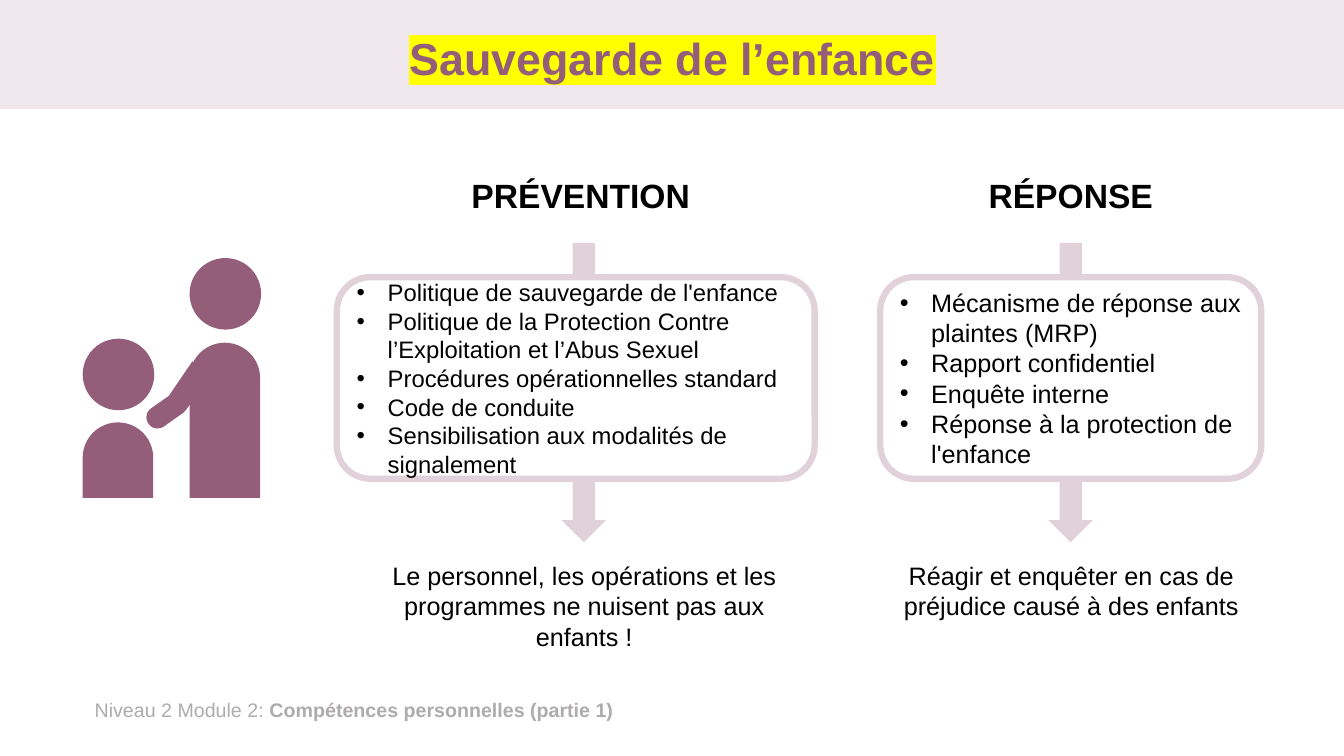
from lxml.etree import SubElement
from pptx import Presentation
from pptx.dml.color import RGBColor
from pptx.enum.shapes import MSO_SHAPE as SHAPE
from pptx.enum.text import MSO_ANCHOR as ANCHOR, MSO_AUTO_SIZE as AUTO, PP_ALIGN as ALIGN
from pptx.oxml.ns import qn
from pptx.util import Pt

PX = 9144
FONT = "Arial"
PLUM = RGBColor(0x94, 0x5E, 0x7A)
PINK = RGBColor(0xE1, 0xD1, 0xD9)
PALE = RGBColor(0xF0, 0xE7, 0xEC)
GREY = RGBColor(0xAE, 0xAB, 0xAB)
BLACK = RGBColor(0, 0, 0)
WHITE = RGBColor(255, 255, 255)

PREVENTION = [
    "Politique de sauvegarde de l'enfance",
    "Politique de la Protection Contre l’Exploitation et l’Abus Sexuel",
    "Procédures opérationnelles standard",
    "Code de conduite",
    "Sensibilisation aux modalités de signalement",
]
RESPONSE = [
    "Mécanisme de réponse aux plaintes (MRP)",
    "Rapport confidentiel",
    "Enquête interne",
    "Réponse à la protection de l'enfance",
]


def px(*lengths):
    return [n * PX for n in lengths]


def add_run(p, text, size, color=BLACK, bold=False):
    r = p.add_run()
    r.text = text
    r.font.size = Pt(size)
    r.font.name = FONT
    r.font.bold = bold
    r.font.color.rgb = color
    return r


def add_shape(s, kind, box, fill, adj=(), rotation=0):
    sp = s.shapes.add_shape(kind, *px(*box))
    sp.shadow.inherit = False
    sp.fill.solid()
    sp.fill.fore_color.rgb = fill
    sp.line.fill.background()
    sp.rotation = rotation
    for i, value in enumerate(adj):
        sp.adjustments[i] = value
    return sp


def add_text(s, box, runs, size, color=BLACK, align=ALIGN.CENTER):
    tf = s.shapes.add_textbox(*px(*box)).text_frame
    tf.word_wrap = True
    p = tf.paragraphs[0]
    p.alignment = align
    for text, bold in runs:
        add_run(p, text, size, color, bold)


def set_title(s, text):
    sp = s.shapes.title
    sp.left, sp.top, sp.width, sp.height = px(92, 13, 1150, 95)
    tf = sp.text_frame
    tf.auto_size = AUTO.NONE
    tf.vertical_anchor = ANCHOR.MIDDLE
    p = tf.paragraphs[0]
    p.alignment = ALIGN.CENTER
    p.line_spacing = 0.9
    r = add_run(p, text, 32, PLUM, True)
    rPr = r.font._element
    highlight = SubElement(rPr, qn("a:highlight"))
    SubElement(highlight, qn("a:srgbClr"), val="FFFF00")
    rPr.find(qn("a:solidFill")).addnext(highlight)


def set_bullet(p):
    pPr = p._p.get_or_add_pPr()
    indent = 31 * PX
    pPr.set("marL", str(indent))
    pPr.set("indent", str(-indent))
    color = SubElement(pPr, qn("a:buClr"))
    SubElement(color, qn("a:srgbClr"), val=str(BLACK))
    SubElement(pPr, qn("a:buFont"), typeface=FONT)
    SubElement(pPr, qn("a:buChar"), char="•")


def add_list_box(s, box, items, size):
    sp = add_shape(s, SHAPE.ROUNDED_RECTANGLE, box, WHITE, [0.167])
    sp.line.color.rgb = PINK
    sp.line.width = Pt(4.5)
    tf = sp.text_frame
    tf.word_wrap = True
    tf.vertical_anchor = ANCHOR.MIDDLE
    for i, item in enumerate(items):
        p = tf.add_paragraph() if i else tf.paragraphs[0]
        p.alignment = ALIGN.LEFT
        set_bullet(p)
        add_run(p, item, size)


def add_column(s, heading, heading_x, arrow_x, box_x, box_w, items, size,
               result, result_x, result_w):
    add_shape(s, SHAPE.DOWN_ARROW, (arrow_x, 241, 44, 297), PINK, [0.5, 0.5])
    add_text(s, (heading_x, 169, 356, 50), [(heading, True)], 24)
    add_list_box(s, (box_x, 275, box_w, 200), items, size)
    add_text(s, (result_x, 551, result_w, 71), [(result, False)], 18)


def add_person(s, x, head_y, body_y, body_h):
    add_shape(s, SHAPE.ROUND_2_SAME_RECTANGLE, (x, body_y, 70, body_h), PLUM, [0.5, 0])
    add_shape(s, SHAPE.OVAL, (x, head_y, 71, 71), PLUM)


def add_arm(s, box, rotation):
    add_shape(s, SHAPE.ROUND_2_SAME_RECTANGLE, box, PLUM, [0.49, 0], rotation)


def main():
    prs = Presentation()
    prs.slide_width, prs.slide_height = px(1333, 750)
    s = prs.slides.add_slide(prs.slide_layouts[5])

    band = add_shape(s, SHAPE.RECTANGLE, (0, 0, 1333, 108), PALE)
    s.shapes.title._element.addprevious(band._element)
    set_title(s, "Sauvegarde de l’enfance")
    add_text(s, (84, 687, 1135, 34),
             [("Niveau 2 Module 2: ", False), ("Compétences personnelles (partie 1)", True)],
             14, GREY, ALIGN.LEFT)

    add_column(s, "PRÉVENTION", 398, 557, 334, 474, PREVENTION, 17,
               "Le personnel, les opérations et les programmes ne nuisent pas aux enfants !",
               351, 457)
    add_column(s, "RÉPONSE", 884, 1040, 873, 378, RESPONSE, 18,
               "Réagir et enquêter en cas de préjudice causé à des enfants", 857, 411)

    add_person(s, 82, 336, 419, 75)
    add_person(s, 188, 256, 340, 154)
    add_arm(s, (174, 360, 22, 53), 214.3)
    add_arm(s, (151, 392, 22, 36), 235)

    prs.save("out.pptx")


if __name__ == "__main__":
    main()
